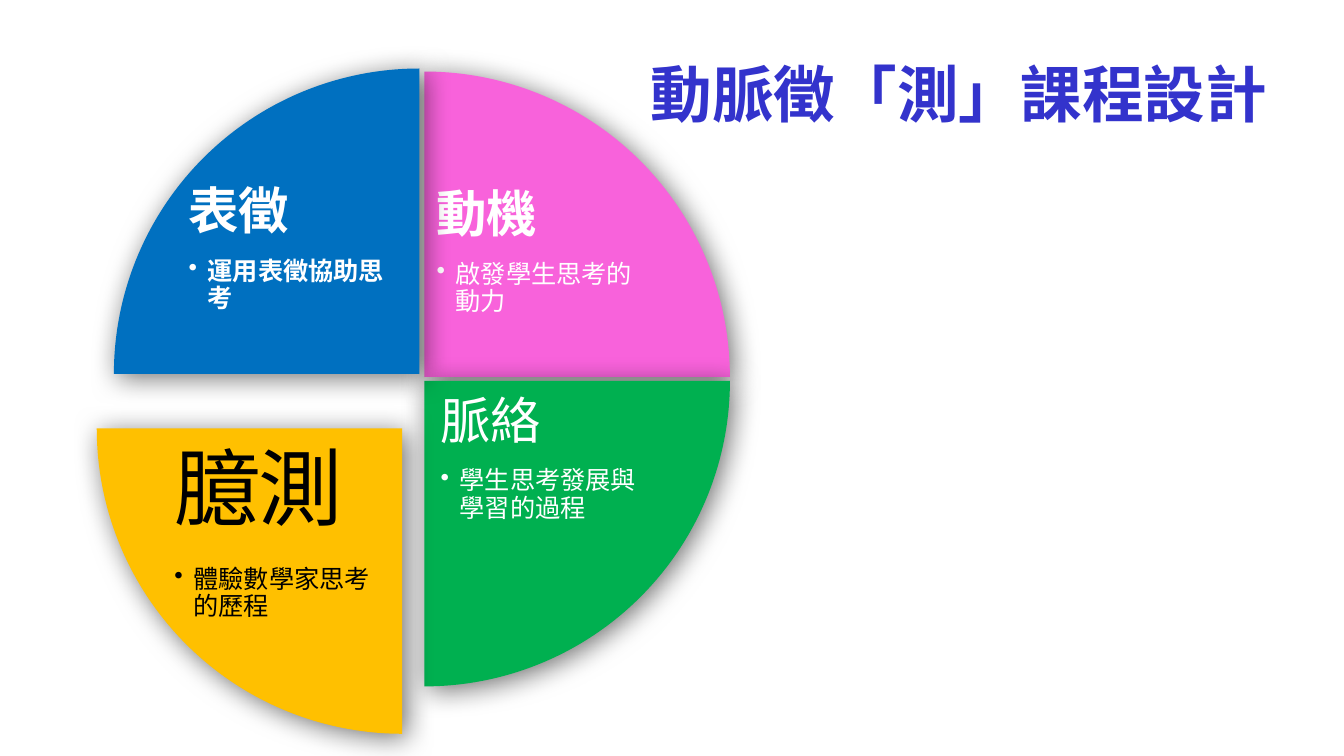
"""Build a slide with four pie quarters, each carrying a thinking stage of the course design."""
import pptx
import pptx.dml.color
import pptx.enum.shapes
import pptx.enum.text
import pptx.oxml.ns
import pptx.util
from lxml import etree

Inches = pptx.util.Inches
RGBColor = pptx.dml.color.RGBColor
qn = pptx.oxml.ns.qn

WHITE = RGBColor(0xFF, 0xFF, 0xFF)
BLACK = RGBColor(0x00, 0x00, 0x00)
PINK = RGBColor(0xF8, 0x62, 0xDB)
GREEN = RGBColor(0x00, 0xB0, 0x50)
YELLOW = RGBColor(0xFF, 0xC0, 0x00)
BLUE = RGBColor(0x00, 0x70, 0xC0)
TITLE_BLUE = RGBColor(0x33, 0x33, 0xCC)
FONT = "Noto Sans CJK SC"
BRACKET_FONT = "Noto Sans CJK TC"
DIAMETER = 6.06
QUARTER = 54


def add_run(paragraph, text, size, color, bold=False, font=FONT):
    run = paragraph.add_run()
    run.text = text
    run.font.size = pptx.util.Pt(size)
    run.font.bold = bold
    run.font.color.rgb = color
    run.font.name = font
    etree.SubElement(run.font._element, qn("a:ea"), typeface=font)


def add_spacing(paragraph, percent):
    paragraph.line_spacing = 0.9
    properties = paragraph._p.get_or_add_pPr()
    space_after = etree.SubElement(properties, qn("a:spcAft"))
    etree.SubElement(space_after, qn("a:spcPct"), val=str(percent * 1000))
    return properties


presentation = pptx.Presentation()
presentation.slide_width = Inches(13.33)
presentation.slide_height = Inches(7.5)
slide = presentation.slides.add_slide(presentation.slide_layouts[5])

title = slide.shapes.title
title.left, title.top = Inches(0.67), Inches(0.3)
title.width, title.height = Inches(12), Inches(1.25)
title.text_frame.auto_size = pptx.enum.text.MSO_AUTO_SIZE.NONE
title.text_frame.vertical_anchor = pptx.enum.text.MSO_ANCHOR.MIDDLE
title_paragraph = title.text_frame.paragraphs[0]
title_paragraph.alignment = pptx.enum.text.PP_ALIGN.RIGHT
for part in ("動脈徵", "「", "測", "」", "課程設計"):
    add_run(title_paragraph, part, 44, TITLE_BLUE, bold=True,
            font=BRACKET_FONT if part in "「」" else FONT)

stages = [
    # start quarter, pie corner, text corner, fill, heading, detail, text colour, size, bolds, inset
    (3, (1.18, 0.71), (4.28, 1.83), PINK, "動機", "啟發學生思考的動力", WHITE, 36, (True, False), 0.05),
    (0, (1.18, 0.75), (4.32, 3.88), GREEN, "脈絡", "學生思考發展與學習的過程", WHITE, 36, (False, False), 0.05),
    (1, (0.96, 1.22), (1.65, 4.35), YELLOW, "臆測", "體驗數學家思考的歷程", BLACK, 60, (False, False), 0.08),
    (2, (1.13, 0.68), (1.82, 1.8), BLUE, "表徵", "運用表徵協助思考", WHITE, 36, (True, True), 0.05),
]
for quarter, pie_corner, text_corner, fill, heading, detail, color, size, bolds, inset in stages:
    pie = slide.shapes.add_shape(pptx.enum.shapes.MSO_SHAPE.PIE, *map(Inches, pie_corner),
                                 Inches(DIAMETER), Inches(DIAMETER))
    pie.adjustments[0] = quarter * QUARTER
    pie.adjustments[1] = (quarter + 1) % 4 * QUARTER
    pie.fill.solid()
    pie.fill.fore_color.rgb = fill
    pie.line.fill.background()
    pie.shadow.inherit = False
    effects = pie._element.spPr.find(qn("a:effectLst"))
    shadow = etree.SubElement(effects, qn("a:outerShdw"), blurRad="254000", dist="50800",
                              dir="2700000", rotWithShape="0")
    shadow_color = etree.SubElement(shadow, qn("a:srgbClr"), val="000000")
    etree.SubElement(shadow_color, qn("a:alpha"), val="55000")

    label = slide.shapes.add_textbox(*map(Inches, text_corner), Inches(2.24), Inches(1.8))
    frame = label.text_frame
    frame.word_wrap = True
    frame.margin_left = frame.margin_right = Inches(inset)
    frame.margin_top = frame.margin_bottom = Inches(inset)
    heading_paragraph = frame.paragraphs[0]
    add_spacing(heading_paragraph, 35)
    add_run(heading_paragraph, heading, size, color, bold=bolds[0])

    detail_paragraph = frame.add_paragraph()
    detail_paragraph.level = 1
    properties = add_spacing(detail_paragraph, 15)
    properties.set("marL", str(Inches(0.19)))
    properties.set("indent", str(-Inches(0.19)))
    etree.SubElement(properties, qn("a:buChar"), char="•")
    add_run(detail_paragraph, detail, 18, color, bold=bolds[1])

presentation.save("out.pptx")
